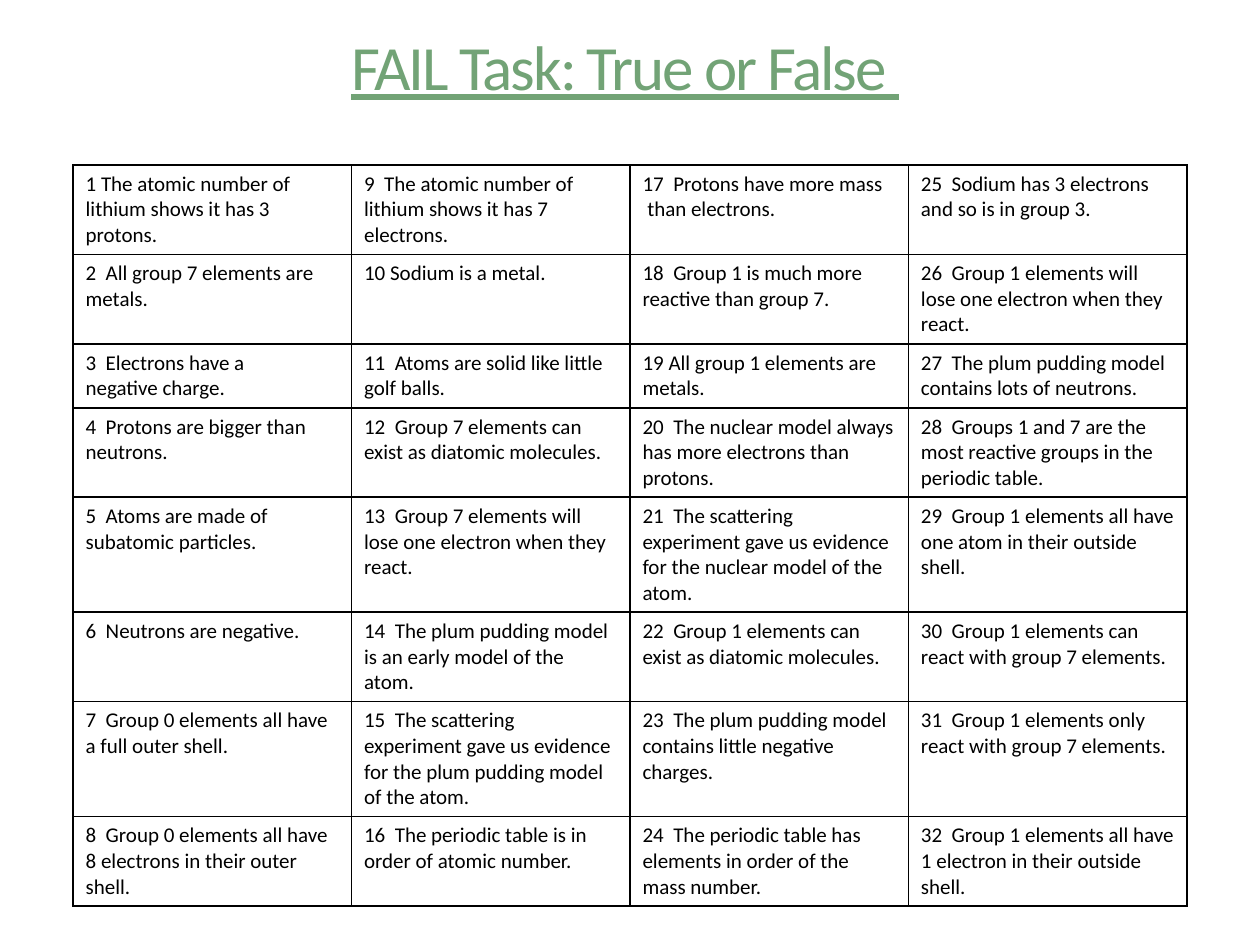
from pptx import Presentation
from pptx.dml.color import RGBColor
from pptx.enum.text import MSO_ANCHOR, MSO_AUTO_SIZE, PP_ALIGN
from pptx.oxml import parse_xml
from pptx.oxml.ns import nsdecls
from pptx.util import Inches, Pt

GREEN = RGBColor(0x72, 0xA3, 0x76)
BLACK = RGBColor(0x00, 0x00, 0x00)

HEADING = "FAIL Task: True or False "
STATEMENTS = [
    "The atomic number of lithium shows it has 3 protons.",
    "All group 7 elements are metals.",
    "Electrons have a\nnegative charge.",
    "Protons are bigger than neutrons.",
    "Atoms are made of\nsubatomic particles.",
    "Neutrons are negative.",
    "Group 0 elements all have a full outer shell.",
    "Group 0 elements all have 8 electrons in their outer shell.",
    "The atomic number of lithium shows it has 7 electrons.",
    "Sodium is a metal.",
    "Atoms are solid like little golf balls.",
    "Group 7 elements can exist as diatomic molecules.",
    "Group 7 elements will lose one electron when they react.",
    "The plum pudding model is an early model of the atom.",
    "The scattering experiment gave us evidence for the plum pudding model of the atom.",
    "The periodic table is in order of atomic number.",
    "Protons have more mass\n than electrons.",
    "Group 1 is much more reactive than group 7.",
    "All group 1 elements are metals.",
    "The nuclear model always has more electrons than protons.",
    "The scattering experiment gave us evidence for the nuclear model of the atom.",
    "Group 1 elements can exist as diatomic molecules.",
    "The plum pudding model contains little negative charges.",
    "The periodic table has elements in order of the mass number.",
    "Sodium has 3 electrons and so is in group 3.",
    "Group 1 elements will lose one electron when they react.",
    "The plum pudding model contains lots of neutrons.",
    "Groups 1 and 7 are the most reactive groups in the periodic table.",
    "Group 1 elements all have one atom in their outside shell.",
    "Group 1 elements can react with group 7 elements.",
    "Group 1 elements only react with group 7 elements.",
    "Group 1 elements all have 1 electron in their outside shell.",
]
SINGLE_SPACED = {1, 10, 19}
ROW_HEIGHTS = [0.71, 0.71, 0.5, 0.71, 0.91, 0.71, 0.91, 0.71]
COLUMN_COUNT = 4
COLUMN_WIDTH = 2.21

HEADING_FONT = {"name": "Calibri", "size": Pt(36), "underline": True}
STATEMENT_FONT = {"name": "Calibri", "size": Pt(12), "bold": False}


def format_font(font, values, color):
    for key, value in values.items():
        setattr(font, key, value)
    font.color.rgb = color


def add_borders(cell):
    properties = cell._tc.get_or_add_tcPr()
    for side in ("lnL", "lnR", "lnT", "lnB"):
        properties.append(parse_xml(
            f'<a:{side} {nsdecls("a")} w="{Pt(1)}"><a:solidFill>'
            f'<a:srgbClr val="{BLACK}"/></a:solidFill></a:{side}>'))


def add_heading(slide):
    heading = slide.shapes.title
    box = {"left": 0.54, "top": 0.36, "width": 8.84, "height": 0.39}
    for key, value in box.items():
        setattr(heading, key, Inches(value))
    frame = heading.text_frame
    frame.text = HEADING
    frame.word_wrap = True
    frame.auto_size = MSO_AUTO_SIZE.NONE
    frame.vertical_anchor = MSO_ANCHOR.MIDDLE
    line = frame.paragraphs[0]
    line.alignment = PP_ALIGN.CENTER
    line.line_spacing = 0.9
    words = line.runs[0]
    format_font(words.font, HEADING_FONT, GREEN)
    words._r.get_or_add_rPr().set("spc", "-120")


def add_statements(slide):
    row_count = len(ROW_HEIGHTS)
    grid = slide.shapes.add_table(
        row_count, COLUMN_COUNT, Inches(0.58), Inches(1.31),
        Inches(COLUMN_WIDTH * COLUMN_COUNT), Inches(sum(ROW_HEIGHTS))).table
    grid.first_row = False
    grid.horz_banding = False
    for column in grid.columns:
        column.width = Inches(COLUMN_WIDTH)
    for row, height in zip(grid.rows, ROW_HEIGHTS):
        row.height = Inches(height)
    for number, statement in enumerate(STATEMENTS, 1):
        column, row = divmod(number - 1, row_count)
        cell = grid.cell(row, column)
        gap = " " if number in SINGLE_SPACED else "  "
        cell.text = f"{number}{gap}{statement}"
        add_borders(cell)
        cell.fill.background()
        for line in cell.text_frame.paragraphs:
            format_font(line.runs[0].font, STATEMENT_FONT, BLACK)


def main():
    deck = Presentation()
    deck.slide_width, deck.slide_height = Inches(10), Inches(7.5)
    slide = deck.slides.add_slide(deck.slide_layouts[5])
    add_heading(slide)
    add_statements(slide)
    deck.save("out.pptx")


if __name__ == "__main__":
    main()
